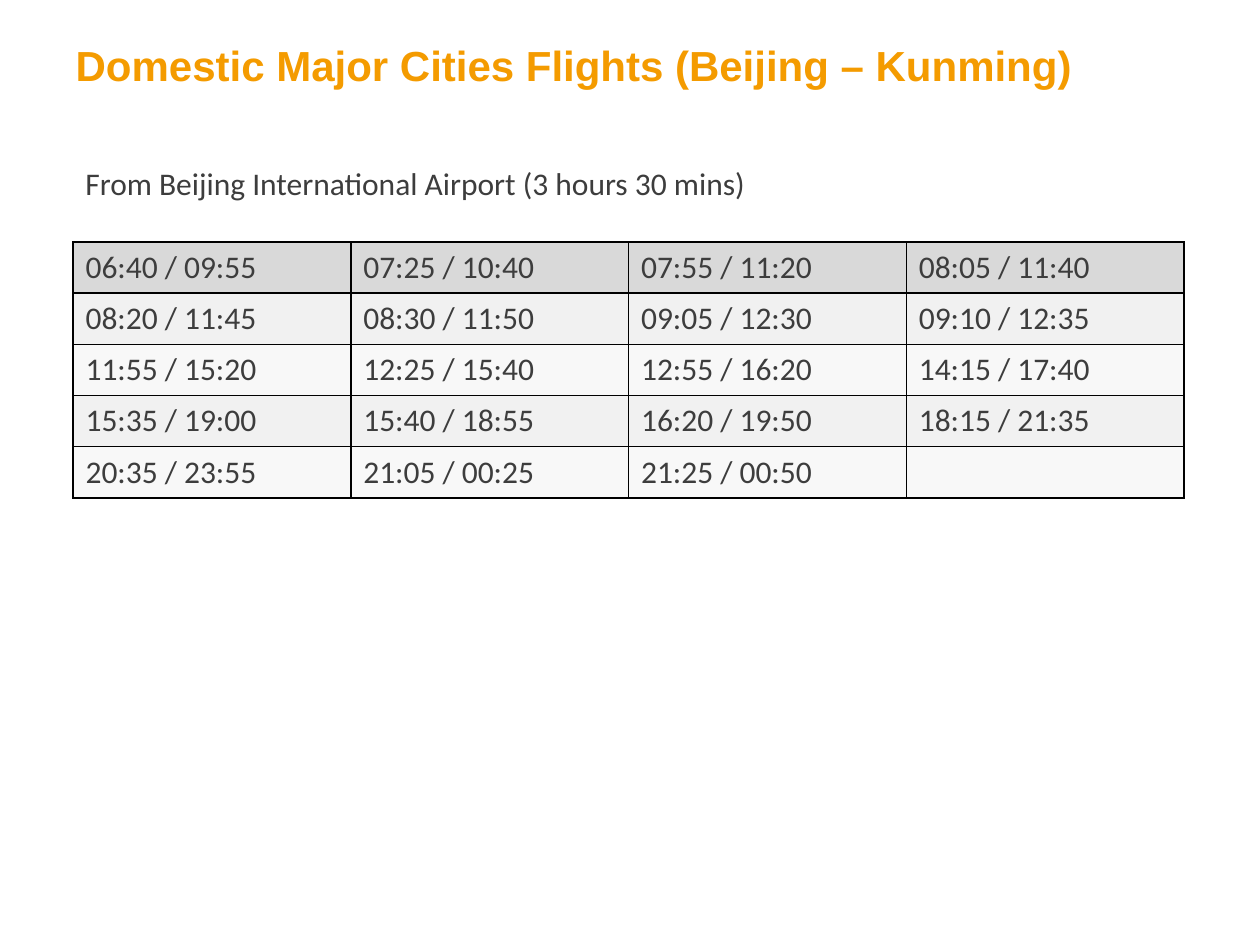
from lxml.etree import SubElement as Sub
from pptx import Presentation
from pptx.dml.color import RGBColor as RGB
from pptx.enum.text import MSO_ANCHOR as Anchor, PP_ALIGN as Align
from pptx.oxml.ns import qn
from pptx.util import Pt

ORANGE = RGB(0xF4, 0x9B, 0x00)
INK = RGB(0x3D, 0x3D, 0x3D)
BLACK = RGB(0x00, 0x00, 0x00)
HEAD = RGB(0xD9, 0xD9, 0xD9)
BANDS = (RGB(0xF8, 0xF8, 0xF8), RGB(0xF1, 0xF1, 0xF1))

TIMES = [
    ["06:40 / 09:55", "07:25 / 10:40", "07:55 / 11:20", "08:05 / 11:40"],
    ["08:20 / 11:45", "08:30 / 11:50", "09:05 / 12:30", "09:10 / 12:35"],
    ["11:55 / 15:20", "12:25 / 15:40", "12:55 / 16:20", "14:15 / 17:40"],
    ["15:35 / 19:00", "15:40 / 18:55", "16:20 / 19:50", "18:15 / 21:35"],
    ["20:35 / 23:55", "21:05 / 00:25", "21:25 / 00:50", ""],
]


def px(n):
    return round(n * 914400 / 126)


def style(par, face, size, color, bold=False):
    font = par.font
    font.name, font.size, font.bold = face, Pt(size), bold
    font.color.rgb = color


def edge(cell):
    """Draw a thin black line on all four sides of a cell."""
    props = cell._tc.get_or_add_tcPr()
    for at, side in enumerate(("lnL", "lnR", "lnT", "lnB")):
        line = props.makeelement(qn(f"a:{side}"), {"w": str(Pt(1))})
        fill = Sub(line, qn("a:solidFill"))
        Sub(fill, qn("a:srgbClr"), val=str(BLACK))
        props.insert(at, line)


def add_title(slide, text, x, y, w, h):
    title = slide.shapes.title
    title.left, title.top, title.width, title.height = map(px, (x, y, w, h))
    frame = title.text_frame
    frame.text = text
    frame.vertical_anchor = Anchor.MIDDLE
    par = frame.paragraphs[0]
    par.alignment = Align.LEFT
    style(par, "Arial", 24, ORANGE, True)


def add_route(slide, text, x, y, w, h):
    box = slide.shapes.add_textbox(*map(px, (x, y, w, h)))
    frame = box.text_frame
    frame.word_wrap = True
    frame.text = text
    style(frame.paragraphs[0], "Calibri", 18, INK)


def add_times(slide, rows, x, y, w, h):
    shape = slide.shapes.add_table(
        len(rows), len(rows[0]), *map(px, (x, y, w, h)))
    for r, row in enumerate(rows):
        for c, text in enumerate(row):
            cell = shape.table.cell(r, c)
            cell.text = text
            style(cell.text_frame.paragraphs[0], "Calibri", 18, INK)
            cell.fill.solid()
            cell.fill.fore_color.rgb = BANDS[r % 2] if r else HEAD
            edge(cell)


def main():
    prs = Presentation()
    prs.slide_width, prs.slide_height = px(1260), px(945)
    slide = prs.slides.add_slide(prs.slide_layouts[5])

    # Heading
    add_title(slide, "Domestic Major Cities Flights (Beijing – Kunming)",
              63, 6, 1134, 117)
    # Timetable
    add_times(slide, TIMES, 73, 242, 1111, 256)
    # Route and flight time
    add_route(slide, "From Beijing International Airport (3 hours 30 mins)",
              73, 158, 766, 50)

    prs.save("out.pptx")


if __name__ == "__main__":
    main()
